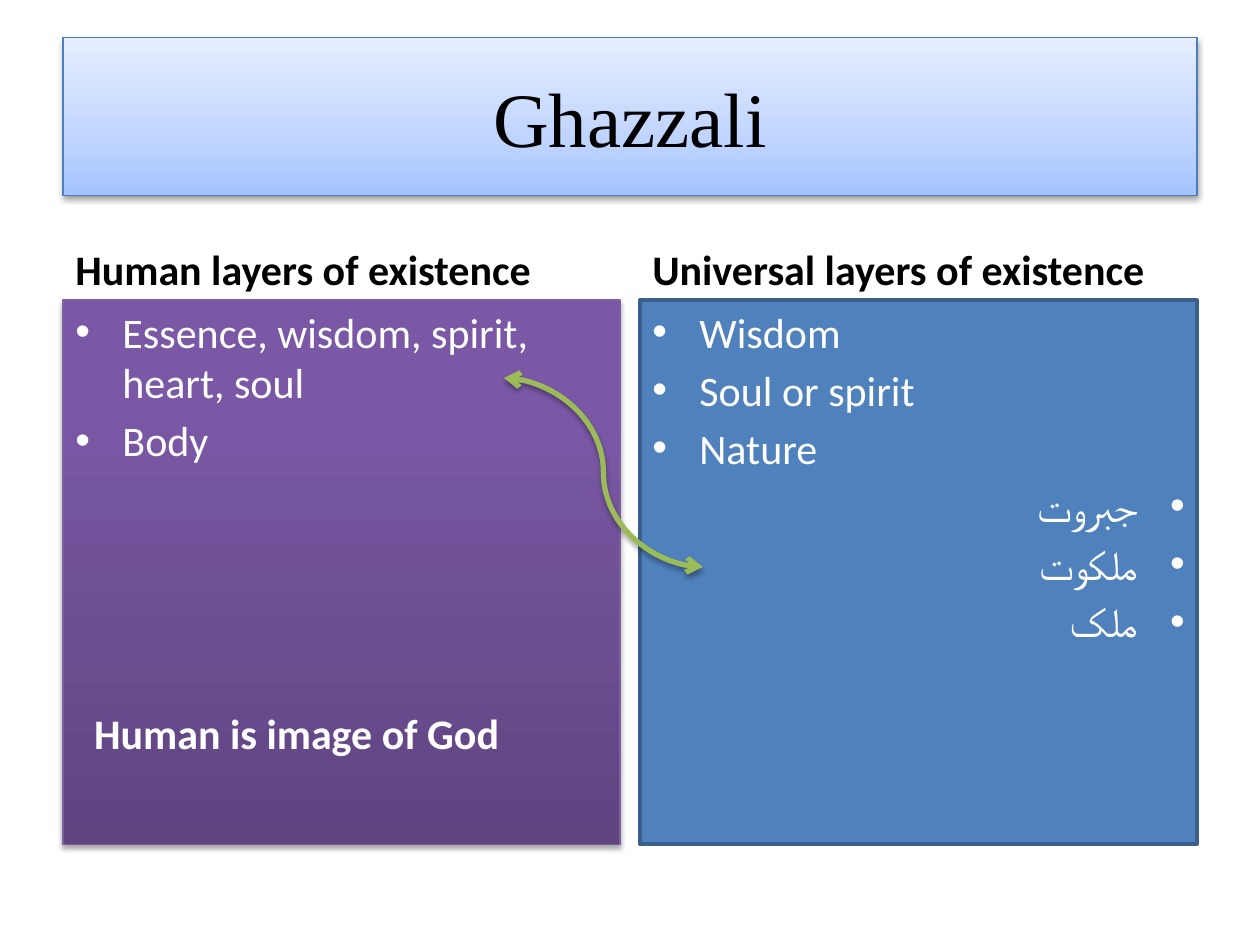
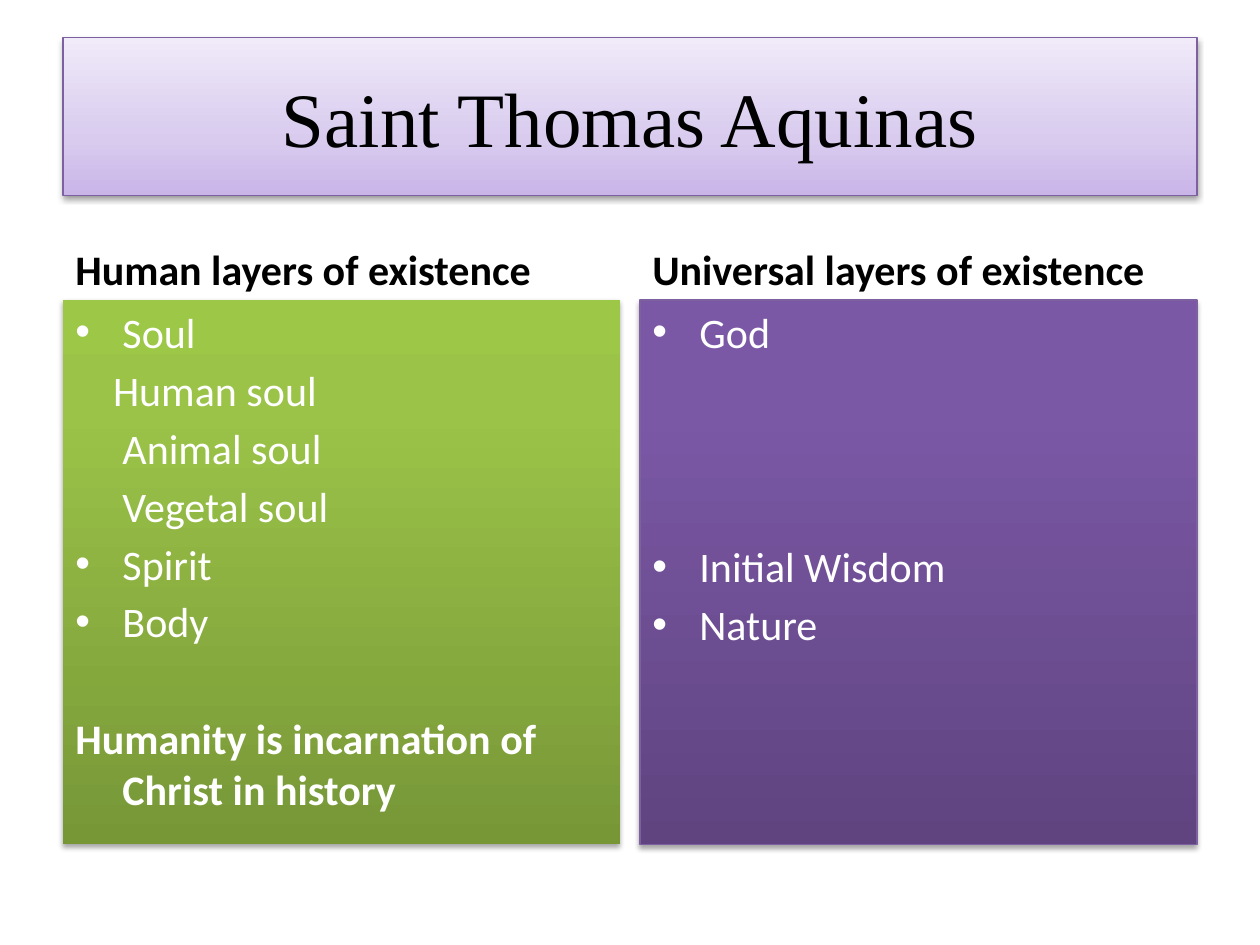
from dataclasses import dataclass

from pptx import Presentation
from pptx.dml.color import RGBColor
from pptx.enum.shapes import MSO_CONNECTOR, MSO_SHAPE
from pptx.enum.text import MSO_ANCHOR, PP_ALIGN
from pptx.oxml import parse_xml
from pptx.oxml.ns import nsdecls, qn
from pptx.util import Cm, Pt


@dataclass
class Item:
    text: str
    bullet: bool = True
    margin: float = 0.95
    hanging: bool = True
    bold: bool = False
    rtl: bool = False
    skipped_lines: int = 0


COLOURS = {
    "ink": "000000",
    "paper": "FFFFFF",
    "blue": "4F81BD",
    "blue edge": "3A5F8C",
    "title blue edge": "4B7EBC",
    "purple edge": "7D60A0",
    "green": "9BBB59",
}
GRADIENTS = {
    "pale blue": [(0, "A4C4FF"), (35, "BFD4FF"), (100, "E6EEFF")],
    "pale purple": [(0, "C9B5E8"), (35, "D8CBEE"), (100, "F0EAF9")],
    "purple": [(0, "5F4480"), (80, "7B58A6"), (100, "7C57A8")],
    "green": [(0, "779737"), (80, "9BC348"), (100, "9DC746")],
}
STYLES = {
    "blue title": ("pale blue", "title blue edge", 0.75, 1.6, 38),
    "purple title": ("pale purple", "purple edge", 0.75, 1.6, 38),
    "purple panel": ("purple", "purple edge", 0.75, 1.8, 35),
    "green panel": ("green", None, 0, 1.8, 35),
    "blue panel": (None, "blue edge", 2, 0, 0),
}
HEADINGS = ["Human layers of existence", "Universal layers of existence"]
THINKERS = [
    {
        "title": "Ghazzali",
        "title style": "blue title",
        "panels": [
            ("purple panel", [
                Item("Essence, wisdom, spirit, heart, soul"),
                Item("Body"),
                Item("Human is image of God", bullet=False, margin=0.38,
                     hanging=False, bold=True, skipped_lines=4),
            ]),
            ("blue panel", [
                Item("Wisdom"),
                Item("Soul or spirit"),
                Item("Nature"),
                Item("جبروت", rtl=True),
                Item("ملکوت", rtl=True),
                Item("ملک", rtl=True),
            ]),
        ],
        "link": (10.16, 7.62, 14.17, 11.43),
    },
    {
        "title": "Saint Thomas Aquinas",
        "title style": "purple title",
        "panels": [
            ("green panel", [
                Item("Soul"),
                Item("Human soul", bullet=False, margin=0.76, hanging=False),
                Item("Animal soul", bullet=False, hanging=False),
                Item("Vegetal soul", bullet=False, hanging=False),
                Item("Spirit"),
                Item("Body"),
                Item("Humanity is incarnation of Christ in history",
                     bullet=False, bold=True, skipped_lines=1),
            ]),
            ("purple panel", [
                Item("God"),
                Item("Initial Wisdom", skipped_lines=3),
                Item("Nature"),
            ]),
        ],
        "link": None,
    },
]

SIDE, CONTENT_WIDTH, COLUMN_WIDTH = 1.27, 22.86, 11.23
COLUMN_LEFTS = [SIDE, SIDE + CONTENT_WIDTH - COLUMN_WIDTH]
TITLE_TOP, TITLE_HEIGHT = 0.76, 3.18
HEADING_TOP, HEADING_HEIGHT = 4.27, 1.78
PANEL_TOP, PANEL_HEIGHT = HEADING_TOP + HEADING_HEIGHT, 10.97
ITEM_GAP, LINE_PITCH = 4.3, 33.6


def colour(name):
    return RGBColor.from_string(COLOURS[name])


def add_text(paragraph, text, ink, size=24, font="Calibri", bold=False):
    run = paragraph.add_run()
    run.text = text
    run.font.name = font
    run.font.size = Pt(size)
    run.font.bold = bold
    run.font.color.rgb = colour(ink)


def set_shadow(part, distance, opacity):
    shadow = ""
    if opacity:
        shadow = (f'<a:outerShdw blurRad="{Pt(3.1)}" dist="{Pt(distance)}" dir="5400000" '
                  f'rotWithShape="0"><a:srgbClr val="{COLOURS["ink"]}">'
                  f'<a:alpha val="{opacity * 1000}"/></a:srgbClr></a:outerShdw>')
    part._element.spPr.append(
        parse_xml(f'<a:effectLst {nsdecls("a")}>{shadow}</a:effectLst>'))


def set_gradient(part, stops):
    part.fill.gradient()
    marks = "".join(f'<a:gs pos="{position * 1000}"><a:srgbClr val="{tone}"/></a:gs>'
                    for position, tone in stops)
    properties = part._element.spPr
    properties.replace(properties.find(qn("a:gradFill")), parse_xml(
        f'<a:gradFill {nsdecls("a")} rotWithShape="1"><a:gsLst>{marks}</a:gsLst>'
        '<a:lin ang="16200000" scaled="0"/></a:gradFill>'))


def apply_style(part, style):
    gradient, edge, edge_width, distance, opacity = STYLES[style]
    if gradient:
        set_gradient(part, GRADIENTS[gradient])
    else:
        part.fill.solid()
        part.fill.fore_color.rgb = colour("blue")
    if edge:
        part.line.color.rgb = colour(edge)
        part.line.width = Pt(edge_width)
    else:
        part.line.fill.background()
    set_shadow(part, distance, opacity)


def add_title(slide, text, style):
    title = slide.shapes.title
    title.left, title.top = Cm(SIDE), Cm(TITLE_TOP)
    title.width, title.height = Cm(CONTENT_WIDTH), Cm(TITLE_HEIGHT)
    apply_style(title, style)
    title.text_frame.vertical_anchor = MSO_ANCHOR.MIDDLE
    paragraph = title.text_frame.paragraphs[0]
    paragraph.alignment = PP_ALIGN.CENTER
    add_text(paragraph, text, "ink", 44, "Times New Roman")


def add_heading(slide, left, text):
    heading = slide.shapes.add_textbox(
        Cm(left), Cm(HEADING_TOP), Cm(COLUMN_WIDTH), Cm(HEADING_HEIGHT)).text_frame
    heading.word_wrap = True
    heading.vertical_anchor = MSO_ANCHOR.BOTTOM
    add_text(heading.paragraphs[0], text, "ink", bold=True)


def format_item(paragraph, item):
    properties = paragraph._p.get_or_add_pPr()
    properties.set("marL", str(Cm(item.margin)))
    properties.set("indent", str(-Cm(item.margin) if item.hanging else 0))
    if item.rtl:
        properties.set("rtl", "1")
    if item.bullet:
        properties.append(parse_xml(f'<a:buFont {nsdecls("a")} typeface="Arial"/>'))
        properties.append(parse_xml(f'<a:buChar {nsdecls("a")} char="•"/>'))
    paragraph.alignment = PP_ALIGN.RIGHT if item.rtl else PP_ALIGN.LEFT


def add_panel(slide, left, style, items):
    panel = slide.shapes.add_shape(
        MSO_SHAPE.RECTANGLE, Cm(left), Cm(PANEL_TOP), Cm(COLUMN_WIDTH), Cm(PANEL_HEIGHT))
    apply_style(panel, style)
    frame = panel.text_frame
    frame.word_wrap = True
    frame.vertical_anchor = MSO_ANCHOR.TOP
    for index, item in enumerate(items):
        paragraph = frame.add_paragraph() if index else frame.paragraphs[0]
        format_item(paragraph, item)
        if index:
            paragraph.space_before = Pt(ITEM_GAP + item.skipped_lines * LINE_PITCH)
        add_text(paragraph, item.text, "paper", bold=item.bold)


def add_link(slide, ends):
    link = slide.shapes.add_connector(MSO_CONNECTOR.CURVE, *map(Cm, ends))
    link.line.color.rgb = colour("green")
    link.line.width = Pt(3)
    for end in ("headEnd", "tailEnd"):
        link.line._get_or_add_ln().append(
            parse_xml(f'<a:{end} {nsdecls("a")} type="arrow"/>'))
    set_shadow(link, 1.8, 35)


def main():
    deck = Presentation()
    deck.slide_width, deck.slide_height = Cm(25.4), Cm(19.05)
    for thinker in THINKERS:
        slide = deck.slides.add_slide(deck.slide_layouts[5])
        add_title(slide, thinker["title"], thinker["title style"])
        for left, heading, (style, items) in zip(COLUMN_LEFTS, HEADINGS, thinker["panels"]):
            add_heading(slide, left, heading)
            add_panel(slide, left, style, items)
        if thinker["link"]:
            add_link(slide, thinker["link"])
    deck.save("out.pptx")


if __name__ == "__main__":
    main()
